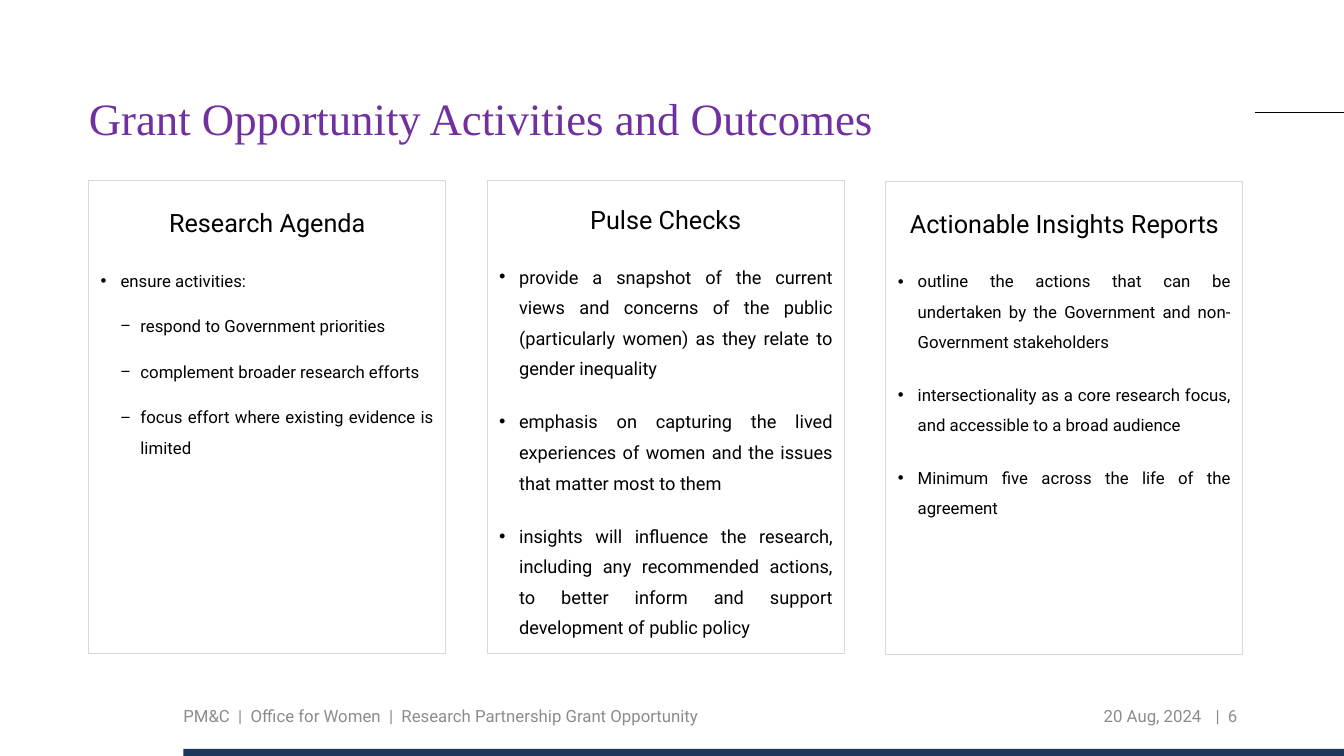
from lxml.etree import SubElement
from pptx import Presentation
from pptx.dml.color import RGBColor
from pptx.enum.shapes import MSO_CONNECTOR, MSO_SHAPE
from pptx.enum.text import MSO_ANCHOR, MSO_AUTO_SIZE, PP_ALIGN
from pptx.oxml.ns import qn
from pptx.util import Pt

PURPLE = RGBColor(0x70, 0x30, 0xA0)
NAVY = RGBColor(0x1B, 0x37, 0x5C)
BLACK = RGBColor(0x00, 0x00, 0x00)
GREY = RGBColor(0x8C, 0x8C, 0x8C)
PALE = RGBColor(0xD9, 0xD9, 0xD9)


def prepare(shape, box, inset=0, anchor=MSO_ANCHOR.TOP):
    """Place a text shape and return its empty, wrapping text frame."""
    shape.left, shape.top, shape.width, shape.height = map(Pt, box)
    frame = shape.text_frame
    frame.word_wrap = True
    frame.auto_size = MSO_AUTO_SIZE.NONE
    frame.vertical_anchor = anchor
    frame.margin_left = frame.margin_right = Pt(inset)
    frame.margin_top = frame.margin_bottom = Pt(inset)
    return frame


def write(frame, text, size=12, font="Roboto", color=BLACK, align=PP_ALIGN.LEFT,
          spacing=1.0, before=0, after=0, level=0, bullet=None):
    """Fill the first paragraph if it is empty, otherwise add one."""
    para = frame.paragraphs[0]
    if para.runs:
        para = frame.add_paragraph()
    para.alignment, para.level, para.line_spacing = align, level, spacing
    para.space_before, para.space_after = Pt(before), Pt(after)
    props = para._p.get_or_add_pPr()
    hang = Pt(14.2) if bullet else 0
    props.set("marL", str(hang * (level + 1)))
    props.set("indent", str(-hang))
    if bullet:
        SubElement(props, qn("a:buChar")).set("char", bullet)
    else:
        SubElement(props, qn("a:buNone"))
    run = para.add_run()
    run.text = text
    run.font.size, run.font.name, run.font.bold = Pt(size), font, False
    run.font.color.rgb = color


deck = Presentation()
deck.slide_width, deck.slide_height = Pt(960), Pt(540)
slide = deck.slides.add_slide(deck.slide_layouts.get_by_name("Comparison"))
shapes = slide.shapes

# Rule at the right edge and bar at the foot
rule = shapes.add_connector(MSO_CONNECTOR.STRAIGHT, Pt(896.4), Pt(80), Pt(960), Pt(80))
rule.line.color.rgb = BLACK
rule.line.width = Pt(0.5)
SubElement(rule._element.spPr, qn("a:effectLst"))

bar = shapes.add_shape(MSO_SHAPE.RECTANGLE, Pt(131), Pt(535), Pt(829), Pt(5))
bar.shadow.inherit = False
bar.fill.solid()
bar.fill.fore_color.rgb = NAVY
bar.line.fill.background()

# Title
frame = prepare(shapes.title, (63.4, 69, 834, 65.5))
write(frame, "Grant Opportunity Activities and Outcomes", size=32,
      font="Times New Roman", color=PURPLE, spacing=0.9)

# Three cards: heading, text size, line spacing, top, items with their level
cards = [
    ("Research Agenda", 12, 1.5, 128.9, [
        (0, "ensure activities:"),
        (1, "respond to Government priorities"),
        (1, "complement broader research efforts"),
        (1, "focus effort where existing evidence is limited")]),
    ("Pulse Checks", 13, 1.4, 128.9, [
        (0, "provide a snapshot of the current views and concerns of the public "
            "(particularly women) as they relate to gender inequality"),
        (0, "emphasis on capturing the lived experiences of women and the issues "
            "that matter most to them"),
        (0, "insights will influence the research, including any recommended actions, "
            "to better inform and support development of public policy")]),
    ("Actionable Insights Reports", 12, 1.5, 129.6, [
        (0, "outline the actions that can be undertaken by the Government "
            "and non-Government stakeholders"),
        (0, "intersectionality as a core research focus, and accessible to a broad audience"),
        (0, "Minimum five across the life of the agreement")]),
]
bodies = [holder for holder in slide.placeholders if holder.placeholder_format.idx in (1, 2, 3)]
for col, (body, card) in enumerate(zip(bodies, cards)):
    head, size, spacing, top, items = card
    body.line.color.rgb = PALE
    body.line.width = Pt(0.75)
    frame = prepare(body, (63.4 + col * 284.7, top, 255, 337.7), inset=8.5)
    write(frame, head, size=18, align=PP_ALIGN.CENTER, spacing=spacing, before=10, after=6)
    for level, text in items:
        write(frame, text, size=size, align=PP_ALIGN.JUSTIFY, spacing=spacing,
              before=5 if level else 10, after=6, level=level, bullet="•−"[level])

spare = slide.placeholders[4]._element
spare.getparent().remove(spare)

# Footer
footer = [
    (131, 422.6, PP_ALIGN.LEFT, "PM&C  |  Office for Women  |  Research Partnership Grant Opportunity"),
    (726.5, 131.8, PP_ALIGN.RIGHT, "20 Aug, 2024"),
    (868.3, 28.8, PP_ALIGN.LEFT, "|  6"),
]
for left, width, align, text in footer:
    box = shapes.add_textbox(0, 0, 0, 0)
    frame = prepare(box, (left, 502, width, 18), anchor=MSO_ANCHOR.MIDDLE)
    write(frame, text, color=GREY, align=align)

deck.save("out.pptx")
